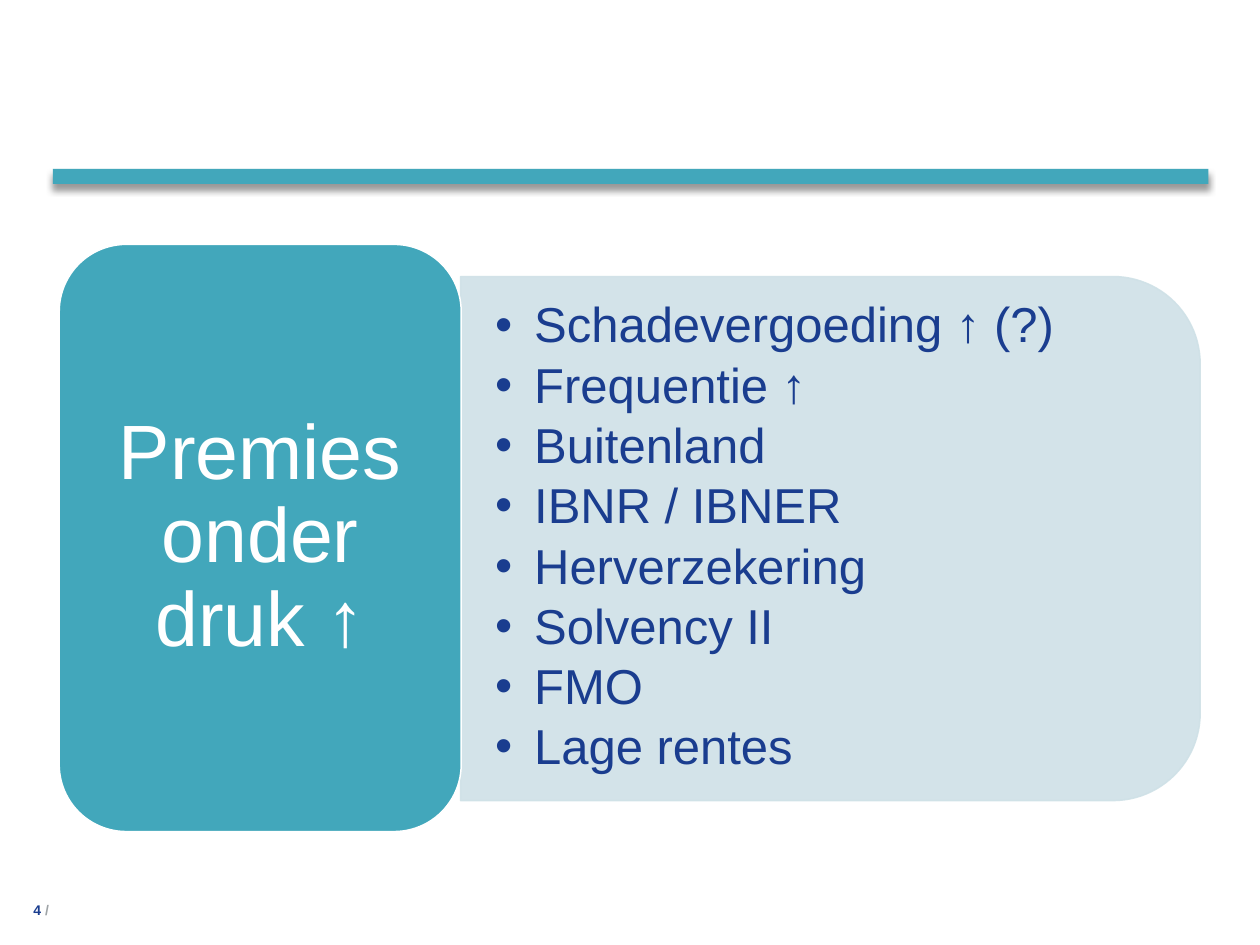
"""Build the slide on premiums under pressure."""
from lxml.etree import SubElement
from pptx import Presentation
from pptx.dml.color import RGBColor
from pptx.enum.shapes import MSO_SHAPE
from pptx.enum.text import MSO_ANCHOR, MSO_AUTO_SIZE, PP_ALIGN
from pptx.oxml.ns import qn
from pptx.util import Inches, Pt

TEAL, PALE, NAVY, GREY, WHITE = "42A7BB", "CFE1E7", "1A3D8F", "9EA3A6", "FFFFFF"
CAUSES = ["Schadevergoeding ↑ (?)", "Frequentie ↑", "Buitenland", "IBNR / IBNER",
          "Herverzekering", "Solvency II", "FMO", "Lage rentes"]


def paint(fmt, color, alpha=None):
    fmt.solid()
    fmt.fore_color.rgb = RGBColor.from_string(color)
    if alpha:
        clr = fmt._xPr.find(qn("a:solidFill"))[0]
        SubElement(clr, qn("a:alpha"), val=str(alpha * 1000))


def write(p, text, size, color, bold=False):
    r = p.add_run()
    r.text = text
    r.font.name, r.font.size, r.font.bold = "Arial", Pt(size), bold
    paint(r.font.fill, color)


prs = Presentation()
prs.slide_width, prs.slide_height = Inches(10), Inches(7.5)
s = prs.slides.add_slide(prs.slide_layouts[1])
title, body = s.placeholders
s.shapes._spTree.remove(title._element)

shapes = []
for kind, box, color, alpha, edge in [
    (MSO_SHAPE.RECTANGLE, (0.42, 1.34, 9.17, 0.12), TEAL, None, None),
    (MSO_SHAPE.ROUND_2_SAME_RECTANGLE, (4.51, 1.34, 4.16, 5.87), PALE, 90, PALE),
    (MSO_SHAPE.ROUNDED_RECTANGLE, (0.47, 1.94, 3.19, 4.66), TEAL, None, WHITE),
]:
    sp = s.shapes.add_shape(kind, *map(Inches, box))
    sp.shadow.inherit = False
    paint(sp.fill, color, alpha)
    if edge:
        paint(sp.line.fill, edge, alpha)
        sp.line.width = Pt(0.85)
    else:
        sp.line.fill.background()
    shapes.append(sp)
bar, panel, card = shapes
panel.rotation = 90

effects = bar._element.spPr.find(qn("a:effectLst"))
shadow = SubElement(effects, qn("a:outerShdw"), blurRad=str(Pt(4)), dist=str(Pt(3)),
                    dir="5400000", algn="t", rotWithShape="0")
black = SubElement(shadow, qn("a:srgbClr"), val="000000")
SubElement(black, qn("a:alpha"), val="40000")

s.shapes._spTree.append(body._element)
body.left, body.top, body.width, body.height = map(Inches, (3.66, 2.39, 5.66, 3.76))
number = s.shapes.add_textbox(0, Inches(7.1), Inches(0.42), Inches(0.19))
for sp, anchor, side, end in [
    (body, MSO_ANCHOR.MIDDLE, 0.27, 0.14),
    (card, MSO_ANCHOR.MIDDLE, 0.18, 0.09),
    (number, MSO_ANCHOR.BOTTOM, 0, 0),
]:
    tf = sp.text_frame
    tf.word_wrap, tf.auto_size = True, MSO_AUTO_SIZE.NONE
    tf.vertical_anchor = anchor
    tf.margin_left = tf.margin_right = Inches(side)
    tf.margin_top = tf.margin_bottom = Inches(end)

tf = body.text_frame
for i, cause in enumerate(CAUSES):
    p = tf.add_paragraph() if i else tf.paragraphs[0]
    p.line_spacing, p.space_before, p.space_after = 0.9, Pt(0), Pt(4.2)
    pPr = p._p.get_or_add_pPr()
    pPr.set("marL", str(Inches(0.31)))
    pPr.set("indent", str(-Inches(0.31)))
    SubElement(pPr, qn("a:buChar"), char="•")
    write(p, cause, 28, NAVY)

p = card.text_frame.paragraphs[0]
p.alignment, p.line_spacing, p.space_after = PP_ALIGN.CENTER, 0.9, Pt(15.4)
write(p, "Premies onder druk ↑", 44, WHITE)

p = number.text_frame.paragraphs[0]
p.alignment = PP_ALIGN.RIGHT
write(p, "4", 8, NAVY, True)
write(p, " / ", 8, GREY, True)

prs.save("out.pptx")
